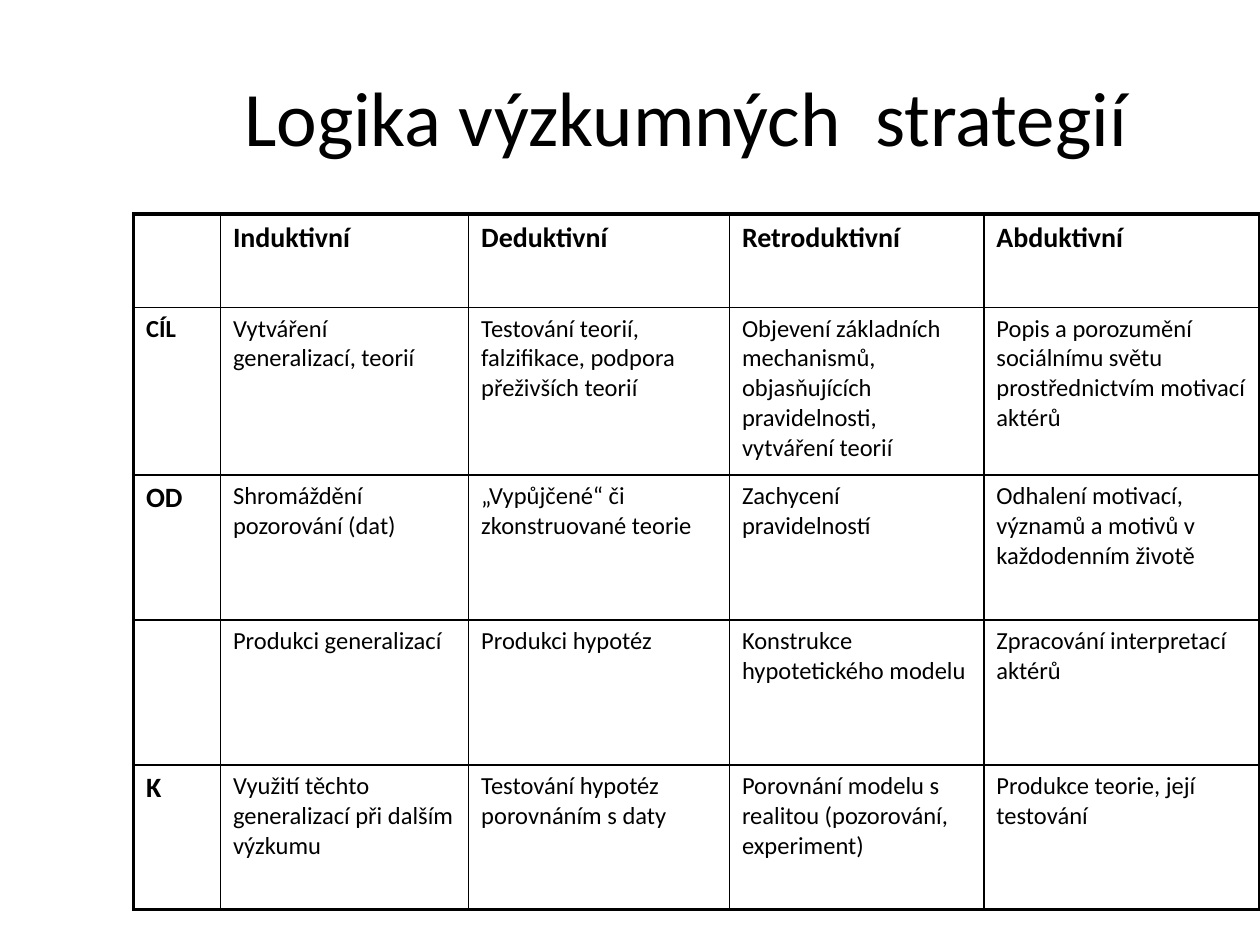
"""Build a slide with a table comparing four research strategies."""
import pptx
import pptx.dml.color
import pptx.enum.text
import pptx.oxml.ns
import pptx.util
from lxml import etree

Inches = pptx.util.Inches
Pt = pptx.util.Pt

TITLE = "Logika výzkumných  strategií"
STRATEGIES = ["", "Induktivní", "Deduktivní", "Retroduktivní", "Abduktivní"]
STAGES = [
    ["CÍL", "Vytváření generalizací, teorií",
     "Testování teorií, falzifikace, podpora přeživších teorií",
     "Objevení základních mechanismů, objasňujících pravidelnosti, vytváření teorií",
     "Popis a porozumění sociálnímu světu prostřednictvím motivací aktérů"],
    ["OD", "Shromáždění pozorování (dat)",
     "„Vypůjčené“ či zkonstruované teorie",
     "Zachycení pravidelností",
     "Odhalení motivací, významů a motivů v každodenním životě"],
    ["", "Produkci generalizací", "Produkci hypotéz",
     "Konstrukce hypotetického modelu", "Zpracování interpretací aktérů"],
    ["K", "Využití těchto generalizací při dalším výzkumu",
     "Testování hypotéz porovnáním s daty",
     "Porovnání modelu s realitou (pozorování, experiment)",
     "Produkce teorie, její testování"],
]
ROWS = [STRATEGIES] + STAGES
COLUMN_WIDTHS = [0.69, 1.97, 2.07, 2.02, 2.19]
ROW_HEIGHTS = [0.74, 1.33, 1.15, 1.15, 1.15]
COLORS = {"text": "000000", "border": "000000"}
FONT = "Calibri"
OUTER, INNER = 2.25, 1
HEADING_SIZE, BODY_SIZE = 16, 14
SMALL_HEADINGS = {"CÍL"}


def format_text(paragraph, size, bold=False):
    for run in paragraph.runs:
        run.font.name = FONT
        run.font.size = Pt(size)
        run.font.bold = bold
        run.font.color.rgb = pptx.dml.color.RGBColor.from_string(COLORS["text"])


def set_borders(cell, widths):
    qn = pptx.oxml.ns.qn
    properties = cell._tc.get_or_add_tcPr()
    for side, width in widths.items():
        line = etree.SubElement(properties, qn(f"a:ln{side}"), w=str(Pt(width)))
        fill = etree.SubElement(line, qn("a:solidFill"))
        etree.SubElement(fill, qn("a:srgbClr"), val=COLORS["border"])


def add_title(slide):
    title = slide.shapes.title
    title.left, title.top = Inches(1.22), Inches(0.25)
    title.width, title.height = Inches(8.45), Inches(1.33)
    frame = title.text_frame
    frame.text = TITLE
    frame.word_wrap = True
    frame.vertical_anchor = pptx.enum.text.MSO_ANCHOR.MIDDLE
    frame.paragraphs[0].alignment = pptx.enum.text.PP_ALIGN.CENTER
    format_text(frame.paragraphs[0], 44)


def add_strategy_table(slide):
    last_row, last_column = len(ROWS) - 1, len(STRATEGIES) - 1
    table = slide.shapes.add_table(
        len(ROWS), len(STRATEGIES), Inches(1.06), Inches(1.7),
        Inches(sum(COLUMN_WIDTHS)), Inches(sum(ROW_HEIGHTS))).table
    table.first_row = table.horz_banding = False
    for column, width in zip(table.columns, COLUMN_WIDTHS):
        column.width = Inches(width)
    for row, height in zip(table.rows, ROW_HEIGHTS):
        row.height = Inches(height)
    for r, texts in enumerate(ROWS):
        for c, text in enumerate(texts):
            cell = table.cell(r, c)
            set_borders(cell, {
                "L": OUTER if c == 0 else INNER,
                "R": OUTER if c == last_column else INNER,
                "T": OUTER if r == 0 else INNER,
                "B": OUTER if r == last_row else INNER,
            })
            cell.fill.background()
            heading = r == 0 or c == 0
            large = heading and text not in SMALL_HEADINGS
            cell.text_frame.text = text
            format_text(cell.text_frame.paragraphs[0],
                        HEADING_SIZE if large else BODY_SIZE, heading)


def main():
    presentation = pptx.Presentation()
    presentation.slide_width = Inches(10)
    presentation.slide_height = Inches(7.5)
    slide = presentation.slides.add_slide(presentation.slide_layouts[5])
    add_title(slide)
    add_strategy_table(slide)
    presentation.save("out.pptx")


if __name__ == "__main__":
    main()
